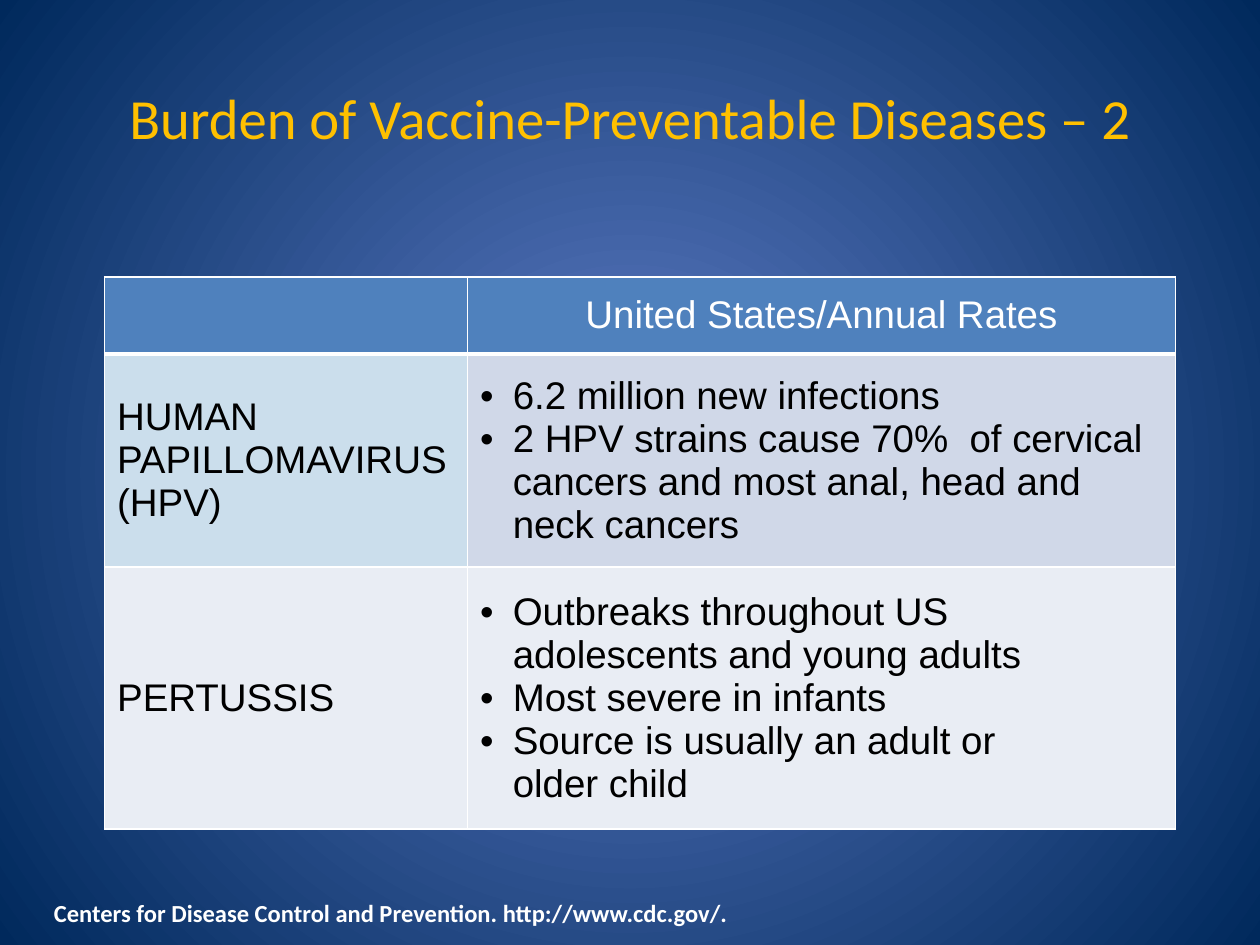
from dataclasses import dataclass

import pptx
import pptx.dml.color
import pptx.enum.text
import pptx.oxml
import pptx.oxml.ns
import pptx.util
from pptx.util import Inches

ALIGN = pptx.enum.text.PP_ALIGN
MIDDLE = pptx.enum.text.MSO_ANCHOR.MIDDLE


@dataclass(frozen=True)
class Theme:
    heading_font: str = "Calibri"
    table_font: str = "Arial"
    title_size: float = 32.4
    table_size: float = 22
    source_size: float = 14
    gold: str = "FFC000"
    white: str = "FFFFFF"
    black: str = "000000"
    glow: str = "5E7CC5"
    navy: str = "00295C"
    header: str = "4F81BD"
    hpv_label: str = "CBDEEC"
    hpv_facts: str = "D0D8E8"
    pertussis: str = "E9EDF4"


THEME = Theme()

COLUMN_WIDTHS = (2.88, 5.62)
ROW_HEIGHTS = (0.61, 1.69, 2.08)

# Each row holds two cells: paragraphs and fill
ROWS = (
    (([], THEME.header),
     (["United States/Annual Rates"], THEME.header)),
    ((["HUMAN PAPILLOMAVIRUS (HPV)"], THEME.hpv_label),
     (["6.2 million new infections",
       "2 HPV strains cause 70%  of cervical cancers and most anal, "
       "head and neck cancers"], THEME.hpv_facts)),
    ((["PERTUSSIS"], THEME.pertussis),
     (["Outbreaks throughout US adolescents and young adults",
       "Most severe in infants",
       "Source is usually an adult or \nolder child"], THEME.pertussis)),
)


def rgb(value):
    return pptx.dml.color.RGBColor.from_string(value)


def make_element(markup):
    name, rest = markup[1:].split(" ", 1)
    return pptx.oxml.parse_xml(f"<{name} {pptx.oxml.ns.nsdecls('a')} {rest}")


def add_text(para, text, font, size, color, bold=False):
    for index, line in enumerate(text.split("\n")):
        if index:
            para.add_line_break()
        span = para.add_run()
        span.text = line
        span.font.name = font
        span.font.size = pptx.util.Pt(size)
        span.font.bold = bold
        span.font.color.rgb = rgb(color)


def paint_background(page):
    fill = page.background.fill
    fill.gradient()
    for stop, color in zip(fill.gradient_stops, (THEME.glow, THEME.navy)):
        stop.color.rgb = rgb(color)
    # Turn the linear gradient into a circular one from the centre
    linear = page.background._cSld.find(".//" + pptx.oxml.ns.qn("a:lin"))
    circle = make_element(
        '<a:path path="circle"><a:fillToRect l="50000" t="50000" '
        'r="50000" b="50000"/></a:path>')
    linear.getparent().replace(linear, circle)


def add_title(page, text):
    title = page.shapes.title
    title.left, title.top = Inches(0.5), Inches(0.3)
    title.width, title.height = Inches(9), Inches(1.25)
    title.text_frame.vertical_anchor = MIDDLE
    para = title.text_frame.paragraphs[0]
    para.alignment = ALIGN.CENTER
    add_text(para, text, THEME.heading_font, THEME.title_size, THEME.gold)


def add_bullet(para):
    properties = para._p.get_or_add_pPr()
    properties.set("marL", str(Inches(0.26)))
    properties.set("indent", str(-Inches(0.26)))
    properties.append(make_element('<a:buFont typeface="Arial"/>'))
    properties.append(make_element('<a:buChar char="•"/>'))


def set_borders(cell, bottom_width):
    properties = cell._tc.get_or_add_tcPr()
    for side in "LRTB":
        width = pptx.util.Pt(bottom_width if side == "B" else 1)
        properties.append(make_element(
            f'<a:ln{side} w="{width}"><a:solidFill>'
            f'<a:srgbClr val="{THEME.white}"/></a:solidFill></a:ln{side}>'))


def fill_cell(cell, lines, color, is_header, bulleted):
    set_borders(cell, 3 if is_header else 1)
    cell.fill.solid()
    cell.fill.fore_color.rgb = rgb(color)
    cell.vertical_anchor = MIDDLE
    ink = THEME.white if is_header else THEME.black
    for index, line in enumerate(lines):
        frame = cell.text_frame
        para = frame.add_paragraph() if index else frame.paragraphs[0]
        para.alignment = ALIGN.CENTER if is_header else ALIGN.LEFT
        if bulleted:
            add_bullet(para)
        add_text(para, line, THEME.table_font, THEME.table_size, ink)


def add_disease_table(page):
    table = page.shapes.add_table(
        len(ROWS), len(COLUMN_WIDTHS), Inches(0.83), Inches(2.2),
        Inches(sum(COLUMN_WIDTHS)), Inches(sum(ROW_HEIGHTS))).table
    table.horz_banding = False
    table.first_row = False
    for column, width in zip(table.columns, COLUMN_WIDTHS):
        column.width = Inches(width)
    for row, height in zip(table.rows, ROW_HEIGHTS):
        row.height = Inches(height)
    for r, row in enumerate(ROWS):
        for c, (lines, color) in enumerate(row):
            fill_cell(table.cell(r, c), lines, color,
                      is_header=r == 0, bulleted=r > 0 and c == 1)


def add_source(page, text):
    box = page.shapes.add_textbox(
        Inches(0.33), Inches(7.08), Inches(9), Inches(0.34))
    box.text_frame.word_wrap = True
    box.text_frame.auto_size = pptx.enum.text.MSO_AUTO_SIZE.SHAPE_TO_FIT_TEXT
    add_text(box.text_frame.paragraphs[0], text, THEME.heading_font,
             THEME.source_size, THEME.white, bold=True)


def main():
    deck = pptx.Presentation()
    deck.slide_width, deck.slide_height = Inches(10), Inches(7.5)
    page = deck.slides.add_slide(deck.slide_layouts.get_by_name("Title Only"))

    paint_background(page)
    add_title(page, "Burden of Vaccine-Preventable Diseases – 2")
    add_disease_table(page)
    add_source(page, "Centers for Disease Control and Prevention. "
                     "http://www.cdc.gov/.")

    deck.save("out.pptx")


if __name__ == "__main__":
    main()
